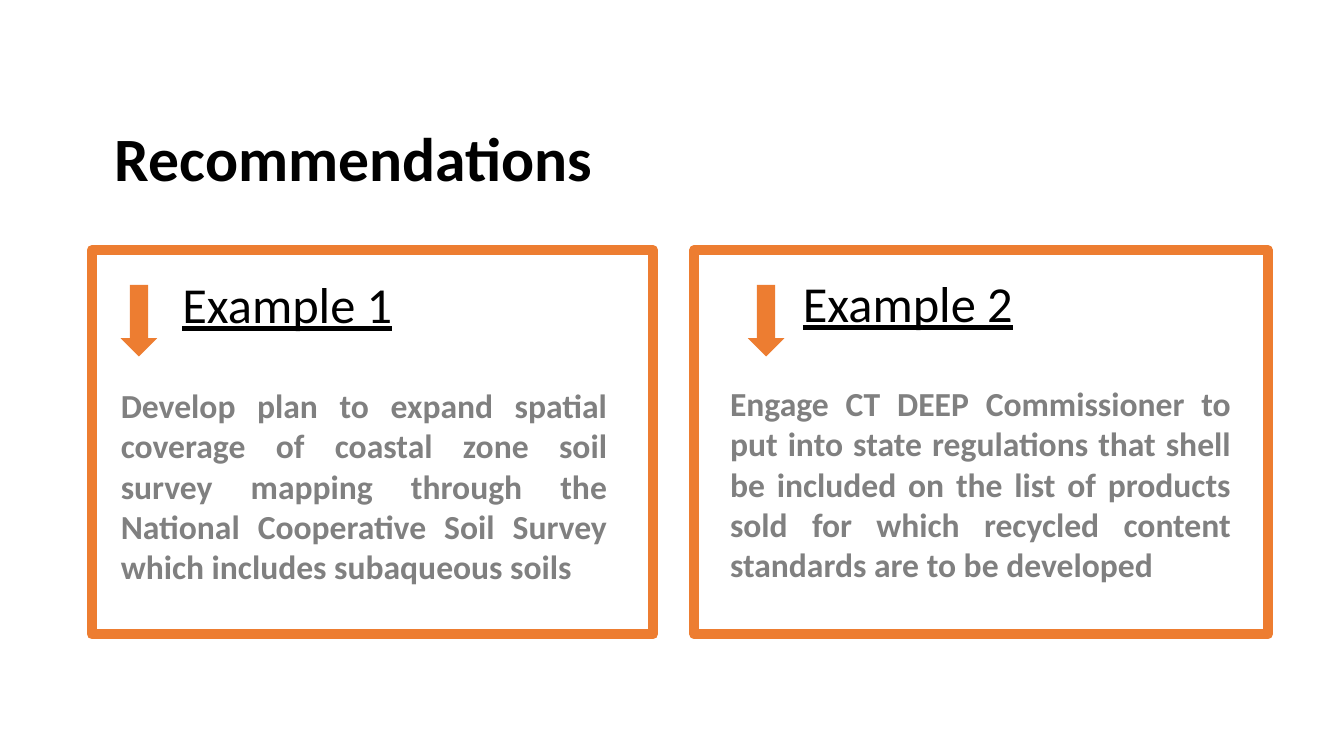
"""Build the Recommendations slide with two framed examples."""
import pptx
import pptx.util
import pptx.dml.color
import pptx.enum.shapes
import pptx.enum.text

SHAPE = pptx.enum.shapes.MSO_SHAPE
ALIGN = pptx.enum.text.PP_ALIGN
COLORS = {"accent": "ED7D31", "body": "808080", "heading": "000000"}


class Deck:
    """Hold the style, a 12 by 12 grid and the current slide."""

    def __init__(self):
        self.prs = pptx.Presentation()
        self.prs.slide_width = pptx.util.Inches(13.33)
        self.prs.slide_height = pptx.util.Inches(7.5)
        self.s = self.prs.slides.add_slide(self.prs.slide_layouts[5])

    def box(self, col, row, cols, rows):
        """Turn grid units into a slide position and size."""
        w, h = self.prs.slide_width / 12, self.prs.slide_height / 12
        return int(col * w), int(row * h), int(cols * w), int(rows * h)

    def color(self, name):
        """Return a named colour."""
        return pptx.dml.color.RGBColor.from_string(COLORS[name])

    def fill_text(self, tf, text, size, color, align, bold=False, underline=False):
        """Set one styled paragraph in a text frame."""
        tf.word_wrap = True
        tf.text = text
        p = tf.paragraphs[0]
        p.alignment = align
        f = p.font
        f.name, f.size = "Calibri", pptx.util.Pt(size)
        f.bold, f.underline = bold, underline
        f.color.rgb = self.color(color)
        return p

    def title(self, text, *cell):
        """Place and fill the title placeholder."""
        sp = self.s.shapes.title
        sp.left, sp.top, sp.width, sp.height = self.box(*cell)
        tf = sp.text_frame
        tf.vertical_anchor = pptx.enum.text.MSO_ANCHOR.MIDDLE
        tf.auto_size = pptx.enum.text.MSO_AUTO_SIZE.NONE
        p = self.fill_text(tf, text, 44, "heading", ALIGN.CENTER, bold=True)
        p.line_spacing = 0.9

    def text(self, text, cell, *style, **marks):
        """Add a text box."""
        sp = self.s.shapes.add_textbox(*self.box(*cell))
        self.fill_text(sp.text_frame, text, *style, **marks)

    def frame(self, *cell):
        """Add an unfilled thick frame."""
        sp = self.s.shapes.add_shape(SHAPE.RECTANGLE, *self.box(*cell))
        sp.shadow.inherit = False
        sp.fill.background()
        sp.line.color.rgb = self.color("accent")
        sp.line.width = pptx.util.Pt(7.25)

    def down_arrow(self, *cell):
        """Add a block arrow turned to point down."""
        sp = self.s.shapes.add_shape(SHAPE.RIGHT_ARROW, *self.box(*cell))
        sp.shadow.inherit = False
        sp.rotation = 90
        sp.fill.solid()
        sp.fill.fore_color.rgb = self.color("accent")
        sp.line.fill.background()

    def example(self, heading, body, frame, arrow_col, heading_cell, body_cell):
        """Add one framed example with its arrow, heading and body."""
        self.text(body, body_cell, 24, "body", ALIGN.JUSTIFY, bold=True)
        self.text(heading, heading_cell, 36, "heading", ALIGN.LEFT, underline=True)
        self.frame(*frame)
        self.down_arrow(arrow_col, 4.8, 0.64, 0.58)


def main():
    """Compose and save the slide."""
    deck = Deck()
    deck.title("Recommendations", 0.5, 1.36, 5.32, 2.4)
    deck.example(
        "Example 1",
        "Develop plan to expand spatial coverage of coastal zone soil survey mapping "
        "through the National Cooperative Soil Survey which includes subaqueous soils",
        (0.82, 3.97, 5.01, 6.1), 0.92, (1.54, 4.26, 2.25, 1.14), (0.99, 6.03, 4.52, 4.03))
    deck.example(
        "Example 2",
        "Engage CT DEEP Commissioner to put into state regulations that shell be included "
        "on the list of products sold for which recycled content standards are to be developed",
        (6.2, 3.97, 5.12, 6.1), 6.52, (7.08, 4.24, 2.08, 1.14), (6.43, 6, 4.65, 3.39))
    deck.prs.save("out.pptx")


if __name__ == "__main__":
    main()
